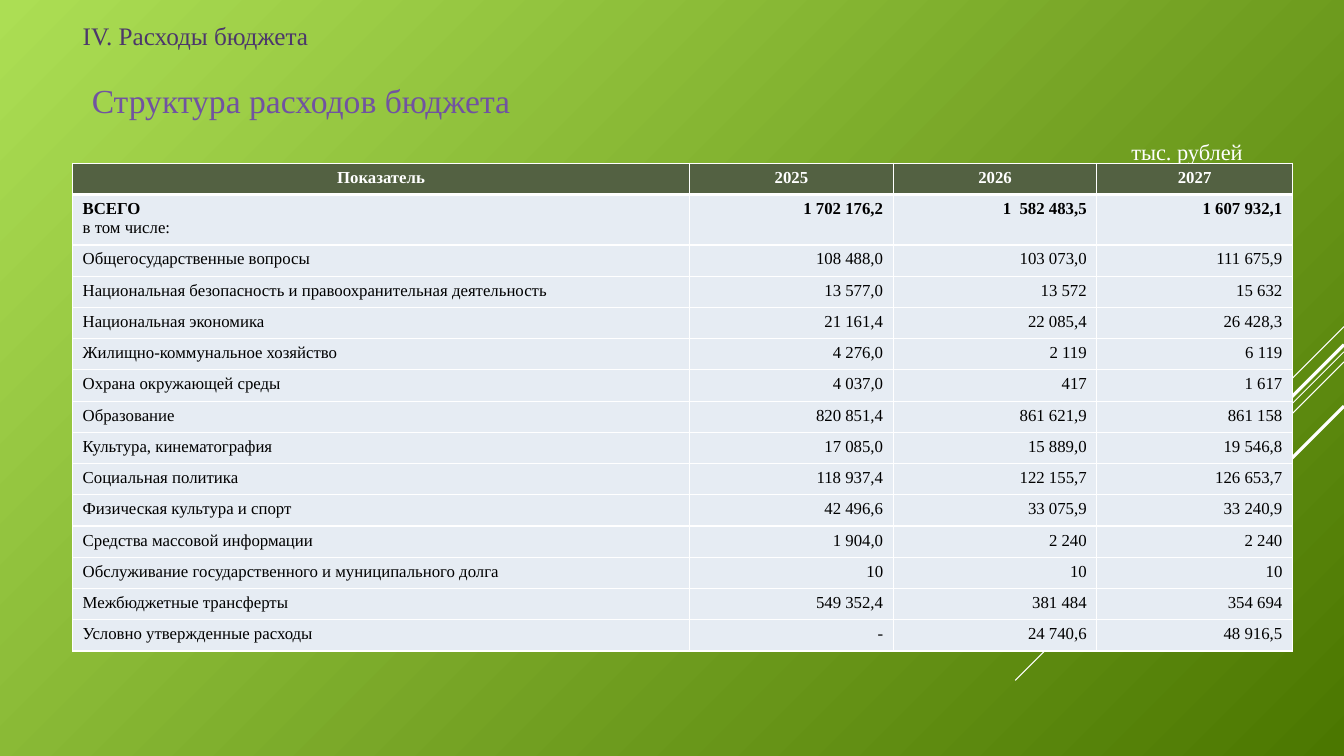
from lxml import etree
from pptx import Presentation
from pptx import util as u
from pptx.dml.color import RGBColor
from pptx.enum import shapes, text
from pptx.oxml import ns

# Page grid, in inches
PAGE_W, PAGE_H = 13.33, 7.5
LEFT, TEXT_W = 0.72, 11.89
ROW, TOTAL_ROW = 0.31, 0.5
COLUMNS = (6.12, 2.02, 2.02, 1.94)
TABLE_TOP = 1.62

FONT = "Times New Roman"
WHITE = RGBColor(0xFF, 0xFF, 0xFF)
BLACK = RGBColor(0, 0, 0)
LIME = RGBColor(0xAC, 0xDE, 0x54)
DARK_GREEN = RGBColor(0x4B, 0x77, 0x00)
DARK_PURPLE = RGBColor(0x4C, 0x37, 0x6B)
PURPLE = RGBColor(0x71, 0x53, 0xA1)
HEADER_GREEN = RGBColor(0x53, 0x61, 0x42)
CELL_BLUE = RGBColor(0xE6, 0xEC, 0xF3)

# Diagonals: height at the right edge, horizontal run, width in points
DIAGONALS = (
    (3.24, 1.0, 0.75),
    (3.49, 3.26, 0.75),
    (3.59, 2.07, 0.75),
    (3.42, 1.92, 2.25),
    (4.03, 1.39, 2.25),
)

HEADER = ("Показатель", "2025", "2026", "2027")
TOTAL = ("ВСЕГО", "1 702 176,2", "1  582 483,5", "1 607 932,1")
EXPENSES = (
    ("Общегосударственные вопросы", "108 488,0", "103 073,0", "111 675,9"),
    ("Национальная безопасность и правоохранительная деятельность",
     "13 577,0", "13 572", "15 632"),
    ("Национальная экономика", "21 161,4", "22 085,4", "26 428,3"),
    ("Жилищно-коммунальное хозяйство", "4 276,0", "2 119", "6 119"),
    ("Охрана окружающей среды", "4 037,0", "417", "1 617"),
    ("Образование", "820 851,4", "861 621,9", "861 158"),
    ("Культура, кинематография", "17 085,0", "15 889,0", "19 546,8"),
    ("Социальная политика", "118 937,4", "122 155,7", "126 653,7"),
    ("Физическая культура и спорт", "42 496,6", "33 075,9", "33 240,9"),
    ("Средства массовой информации", "1 904,0", "2 240", "2 240"),
    ("Обслуживание государственного и муниципального долга", "10", "10", "10"),
    ("Межбюджетные трансферты", "549 352,4", "381 484", "354 694"),
    ("Условно утвержденные расходы", "-", "24 740,6", "48 916,5"),
)


def write(para, words, size=12, color=BLACK, bold=False,
          align=text.PP_ALIGN.LEFT, before=0):
    """Put formatted text into a paragraph."""
    para.alignment = align
    para.space_before = u.Pt(before)
    span = para.add_run()
    span.text = words
    span.font.name = FONT
    span.font.size = u.Pt(size)
    span.font.bold = bold
    span.font.color.rgb = color


def indent(para, left, first=0):
    """Set the paragraph's indents and remove its bullet."""
    props = para._p.get_or_add_pPr()
    props.set("marL", str(u.Inches(left)))
    props.set("indent", str(u.Inches(first)))
    etree.SubElement(props, ns.qn("a:buNone"))


def place(box, top, height, anchor):
    """Move a placeholder to the text column."""
    box.left, box.top = u.Inches(LEFT), u.Inches(top)
    box.width, box.height = u.Inches(TEXT_W), u.Inches(height)
    frame = box.text_frame
    frame.word_wrap = True
    frame.auto_size = text.MSO_AUTO_SIZE.NONE
    frame.vertical_anchor = anchor
    return frame


def paint_background(page):
    fill = page.background.fill
    fill.gradient()
    fill.gradient_angle = 315
    for stop, color in zip(fill.gradient_stops, (LIME, DARK_GREEN)):
        stop.color.rgb = color


def add_diagonal(page, top, run, width):
    """Draw a 45° line down and left from the right edge."""
    line = page.shapes.add_connector(
        shapes.MSO_CONNECTOR.STRAIGHT, u.Inches(PAGE_W), u.Inches(top),
        u.Inches(PAGE_W - run), u.Inches(top + run))
    line.line.color.rgb = WHITE
    line.line.width = u.Pt(width)
    etree.SubElement(line._element.spPr, ns.qn("a:effectLst"))


def border_cell(cell, top=0.96, bottom=0.96):
    """Add white borders, which stand before the fill in the cell's XML."""
    props = cell._tc.get_or_add_tcPr()
    widths = {"lnL": 0.96, "lnR": 0.96, "lnT": top, "lnB": bottom}
    for index, (side, width) in enumerate(widths.items()):
        edge = etree.Element(ns.qn("a:" + side), w=str(u.Pt(width)))
        fill = etree.SubElement(edge, ns.qn("a:solidFill"))
        etree.SubElement(fill, ns.qn("a:srgbClr"), val=str(WHITE))
        props.insert(index, edge)


def add_expense_table(page):
    rows = (HEADER, TOTAL) + EXPENSES
    heights = [ROW, TOTAL_ROW] + [ROW] * len(EXPENSES)
    table = page.shapes.add_table(
        len(rows), len(COLUMNS), u.Inches(LEFT), u.Inches(TABLE_TOP),
        u.Inches(sum(COLUMNS)), u.Inches(sum(heights))).table
    for column, width in zip(table.columns, COLUMNS):
        column.width = u.Inches(width)
    for r, (values, height) in enumerate(zip(rows, heights)):
        table.rows[r].height = u.Inches(height)
        for c, value in enumerate(values):
            cell = table.cell(r, c)
            cell.fill.solid()
            cell.fill.fore_color.rgb = CELL_BLUE if r else HEADER_GREEN
            border_cell(cell, top=3 if r == 1 else 0.96,
                        bottom=3 if r == 0 else 0.96)
            if r == 0:
                align = text.PP_ALIGN.CENTER
            else:
                align = text.PP_ALIGN.RIGHT if c else text.PP_ALIGN.LEFT
            write(cell.text_frame.paragraphs[0], value, bold=r < 2,
                  color=BLACK if r else WHITE, align=align)
    write(table.cell(1, 0).text_frame.add_paragraph(), "в том числе:")


def main():
    deck = Presentation()
    deck.slide_width, deck.slide_height = u.Inches(PAGE_W), u.Inches(PAGE_H)
    page = deck.slides.add_slide(deck.slide_layouts[1])
    paint_background(page)

    # Diagonal decoration
    for diagonal in DIAGONALS:
        add_diagonal(page, *diagonal)

    # Section title
    title = place(page.shapes.title, 0.19, 0.32, text.MSO_ANCHOR.MIDDLE)
    write(title.paragraphs[0], "IV. Расходы бюджета", size=18,
          color=DARK_PURPLE)

    # Subtitle and unit of measure
    body = place(page.placeholders[1], 0.74, 0.98, text.MSO_ANCHOR.TOP)
    subtitle, unit = body.paragraphs[0], body.add_paragraph()
    write(subtitle, "Структура расходов бюджета", size=24, color=PURPLE,
          before=6)
    indent(subtitle, 0.4, -0.31)
    write(unit, "тыс. рублей", size=16, color=WHITE, before=13)
    indent(unit, 10.4)

    add_expense_table(page)
    deck.save("out.pptx")


if __name__ == "__main__":
    main()
